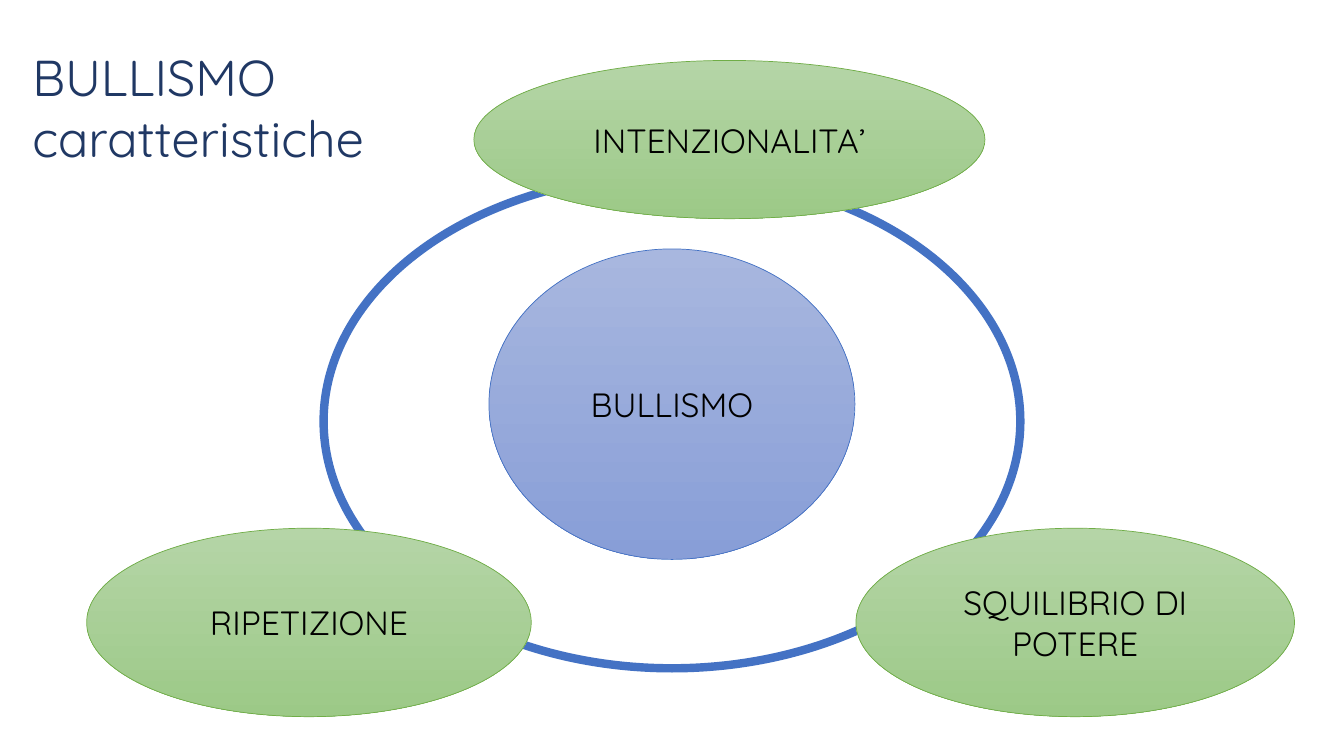
from typing import NamedTuple

from pptx import Presentation
from pptx.dml.color import RGBColor
from pptx.enum.shapes import MSO_SHAPE
from pptx.enum.text import MSO_ANCHOR, MSO_AUTO_SIZE, PP_ALIGN
from pptx.util import Inches, Pt

WIDTH, HEIGHT = Inches(13.33), Inches(7.5)
FONT = "Quicksand"


class Box(NamedTuple):
    left: float
    top: float
    width: float
    height: float


class Style(NamedTuple):
    fills: tuple[str, ...]
    line: str
    weight: float


class Oval(NamedTuple):
    box: Box
    style: Style
    text: str = ""


RING = Style(("FFFFFF",), "4472C4", 6)
CORE = Style(("A8B7DF", "889ED7"), "4472C4", 0.5)
TRAIT = Style(("B5D5A7", "9CC987"), "70AD47", 0.5)

TITLE_BOX = Box(1.65, 5.47, 33.08, 17.47)
OVALS = [
    Oval(Box(24.08, 23.07, 51.84, 65.33), RING),
    Oval(Box(36.38, 32.93, 27.23, 41.07), CORE, "BULLISMO"),
    Oval(Box(35.26, 8, 38.03, 20.93), TRAIT, "INTENZIONALITA’"),
    Oval(Box(6.45, 69.87, 33.08, 24.93), TRAIT, "RIPETIZIONE"),
    Oval(Box(63.69, 69.87, 32.63, 24.93), TRAIT, "SQUILIBRIO DI POTERE"),
]


def color(value: str) -> RGBColor:
    return RGBColor.from_string(value)


def place(box: Box) -> dict:
    return {
        "left": int(WIDTH * box.left / 100),
        "top": int(HEIGHT * box.top / 100),
        "width": int(WIDTH * box.width / 100),
        "height": int(HEIGHT * box.height / 100),
    }


def apply(target, values: dict) -> None:
    for name, value in values.items():
        setattr(target, name, value)


def write(tf, lines: list[str], size: float, ink: str, align, anchor) -> None:
    apply(tf, {"word_wrap": True, "vertical_anchor": anchor,
               "auto_size": MSO_AUTO_SIZE.NONE})
    for i, line in enumerate(lines):
        p = tf.add_paragraph() if i else tf.paragraphs[0]
        apply(p, {"alignment": align, "line_spacing": 1.0, "space_before": Pt(0)})
        r = p.add_run()
        r.text = line
        apply(r.font, {"name": FONT, "size": Pt(size)})
        r.font.color.rgb = color(ink)


def draw_title(s) -> None:
    title = s.shapes.title
    apply(title, place(TITLE_BOX))
    write(title.text_frame, ["BULLISMO", "caratteristiche"], 36, "203864",
          PP_ALIGN.LEFT, MSO_ANCHOR.TOP)


def draw_oval(s, oval: Oval) -> None:
    sp = s.shapes.add_shape(MSO_SHAPE.OVAL, **place(oval.box))
    sp.shadow.inherit = False
    style = oval.style
    if len(style.fills) == 1:
        sp.fill.solid()
        sp.fill.fore_color.rgb = color(style.fills[0])
    else:
        sp.fill.gradient()
        sp.fill.gradient_angle = 270
        for stop, value in zip(sp.fill.gradient_stops, style.fills):
            stop.color.rgb = color(value)
    sp.line.color.rgb = color(style.line)
    sp.line.width = Pt(style.weight)
    if oval.text:
        write(sp.text_frame, [oval.text], 24, "000000",
              PP_ALIGN.CENTER, MSO_ANCHOR.MIDDLE)


def main() -> None:
    prs = Presentation()
    apply(prs, {"slide_width": WIDTH, "slide_height": HEIGHT})
    s = prs.slides.add_slide(prs.slide_layouts[5])
    draw_title(s)
    for oval in OVALS:
        draw_oval(s, oval)
    prs.save("out.pptx")


if __name__ == "__main__":
    main()
